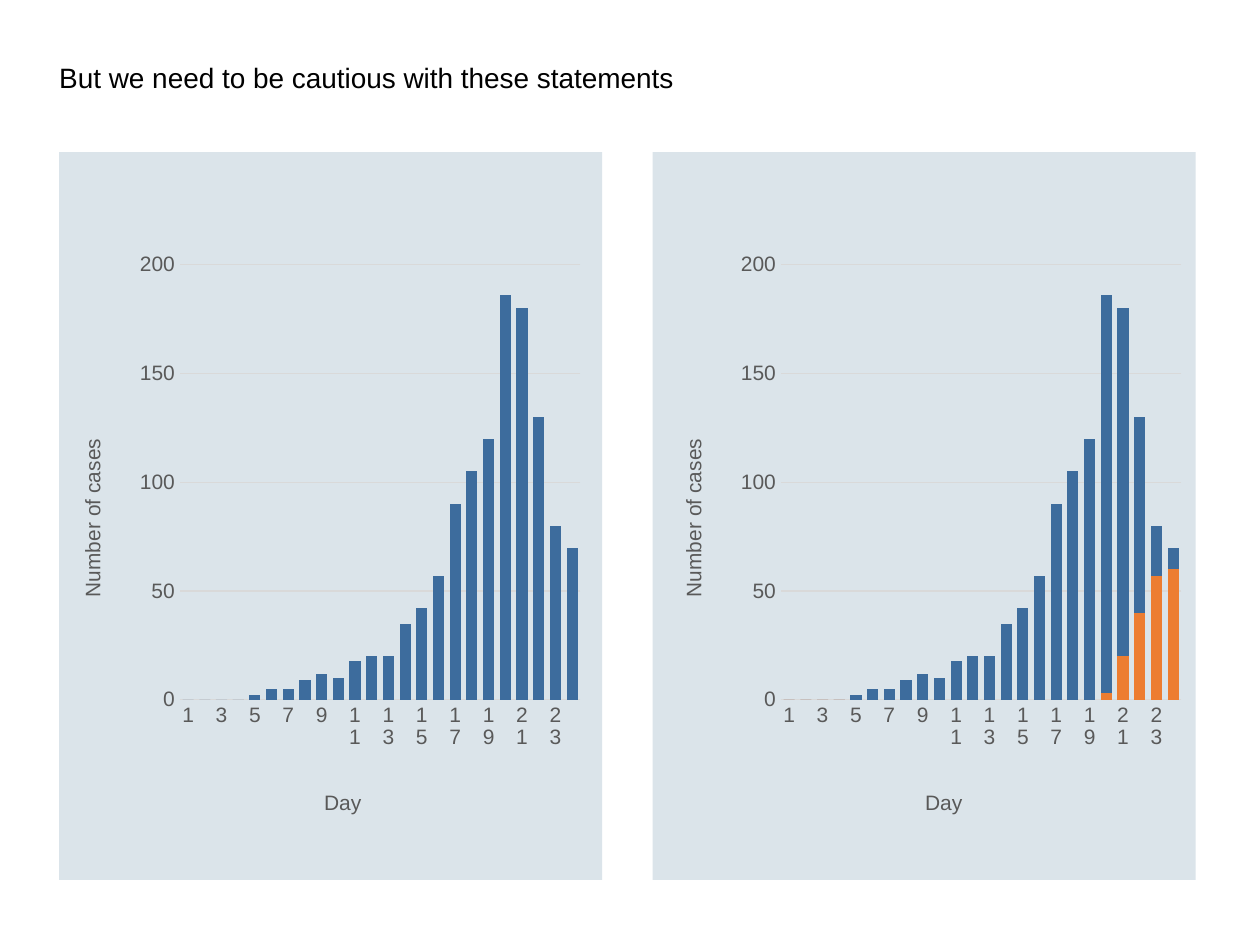
from lxml import etree
from pptx import Presentation, util as u
from pptx.chart.data import CategoryChartData
from pptx.dml.color import RGBColor
from pptx.enum import chart as ch, shapes, text
from pptx.oxml.ns import qn

PANEL = RGBColor(0xDB, 0xE4, 0xEA)
BLUE = RGBColor(0x3D, 0x6C, 0x9D)
ORANGE = RGBColor(0xED, 0x7D, 0x31)
GREY = RGBColor(0x59, 0x59, 0x59)
GRID = RGBColor(0xD9, 0xD9, 0xD9)
BLACK = RGBColor(0, 0, 0)


def style(font, size=12, color=GREY):
    font.name = "Arial"
    font.size = u.Pt(size)
    font.bold = False
    font.color.rgb = color


def write(frame, words, **look):
    frame.text = words
    para = frame.paragraphs[0]
    style(para.runs[0].font, **look)
    return para


def place(node, **box):
    layout = node.find(qn("c:layout"))
    if layout is None:
        layout = etree.Element(qn("c:layout"))
        spot = node.find(qn("c:tx"))
        if spot is None:
            node.insert(0, layout)
        else:
            spot.addnext(layout)
    for child in list(layout):
        layout.remove(child)
    manual = etree.SubElement(layout, qn("c:manualLayout"))
    if "w" in box:
        etree.SubElement(manual, qn("c:layoutTarget")).set("val", "inner")
    for key in ("xMode", "yMode"):
        etree.SubElement(manual, qn("c:" + key)).set("val", "edge")
    for key, val in box.items():
        etree.SubElement(manual, qn("c:" + key)).set("val", str(val))


class Deck:
    def __init__(self, wide=10, high=7.5):
        self.show = Presentation()
        self.show.slide_width = u.Inches(wide)
        self.show.slide_height = u.Inches(high)
        self.slide = self.show.slides.add_slide(self.show.slide_layouts[5])

    def area(self, left, top, wide, high):
        w, h = self.show.slide_width, self.show.slide_height
        return [int(v) for v in (left * w, top * h, wide * w, high * h)]

    def title(self, words, *box):
        head = self.slide.shapes.title
        head.left, head.top, head.width, head.height = self.area(*box)
        frame = head.text_frame
        frame.margin_left = frame.margin_right = 0
        frame.margin_top = frame.margin_bottom = 0
        frame.vertical_anchor = text.MSO_ANCHOR.TOP
        frame.auto_size = text.MSO_AUTO_SIZE.NONE
        frame.word_wrap = True
        para = write(frame, words, size=16, color=BLACK)
        para.alignment = text.PP_ALIGN.LEFT

    def panel(self, *box):
        rect = self.slide.shapes.add_shape(
            shapes.MSO_SHAPE.RECTANGLE, *self.area(*box))
        rect.shadow.inherit = False
        rect.fill.solid()
        rect.fill.fore_color.rgb = PANEL
        rect.line.fill.background()

    def axis(self, axis, name, x, y):
        write(axis.axis_title.text_frame, name)
        place(axis.axis_title._element, x=x, y=y)
        axis.major_tick_mark = axis.minor_tick_mark = ch.XL_TICK_MARK.NONE
        style(axis.tick_labels.font)
        body = axis._element.find(qn("c:txPr")).find(qn("a:bodyPr"))
        body.set("rot", "0")
        body.set("vert", "horz")

    def chart(self, kind, days, series, *box):
        data = CategoryChartData()
        data.categories = days
        for num, (vals, _) in enumerate(series, 1):
            data.add_series(f"Series {num}", vals)
        chart = self.slide.shapes.add_chart(kind, *self.area(*box), data).chart
        style(chart.font, size=10, color=BLACK)
        chart.has_legend = chart.has_title = False
        plot = chart.plots[0]
        plot.gap_width = 50
        plot.vary_by_categories = False
        if kind == ch.XL_CHART_TYPE.COLUMN_STACKED:
            plot.overlap = 100
        for bars, (_, color) in zip(plot.series, series):
            bars.format.fill.solid()
            bars.format.fill.fore_color.rgb = color
            bars.invert_if_negative = False

        cat, val = chart.category_axis, chart.value_axis
        self.axis(cat, "Day", 0.48, 0.95)
        self.axis(val, "Number of cases", 0.01, 0.34)
        val.minimum_scale, val.maximum_scale, val.major_unit = 0, 200, 50
        val.format.line.fill.background()
        for line in (cat.format.line, val.major_gridlines.format.line):
            line.color.rgb = GRID
            line.width = u.Pt(0.75)
        place(chart._chartSpace.chart.plotArea, x=0.21, y=0.04, w=0.77, h=0.76)


def main():
    days = [str(d) if d % 2 else "" for d in range(1, 25)]
    cases = [0, 0, 0, 0, 2, 5, 5, 9, 12, 10, 18, 20, 20, 35, 42, 57, 90,
             105, 120, 186, 180, 130, 80, 70]
    late = [0] * 19 + [3, 20, 40, 57, 60]
    rest = [total - part for total, part in zip(cases, late)]
    kinds = ch.XL_CHART_TYPE

    deck = Deck()
    deck.title("But we need to be cautious with these statements",
               0.047, 0.064, 0.61, 0.036)
    for left in (0.047, 0.518):
        deck.panel(left, 0.161, 0.431, 0.77)
    size = 0.256, 0.413, 0.612
    deck.chart(kinds.COLUMN_CLUSTERED, days, [(cases, BLUE)], 0.056, *size)
    deck.chart(kinds.COLUMN_STACKED, days,
               [(late, ORANGE), (rest, BLUE)], 0.533, *size)
    deck.show.save("out.pptx")


if __name__ == "__main__":
    main()
